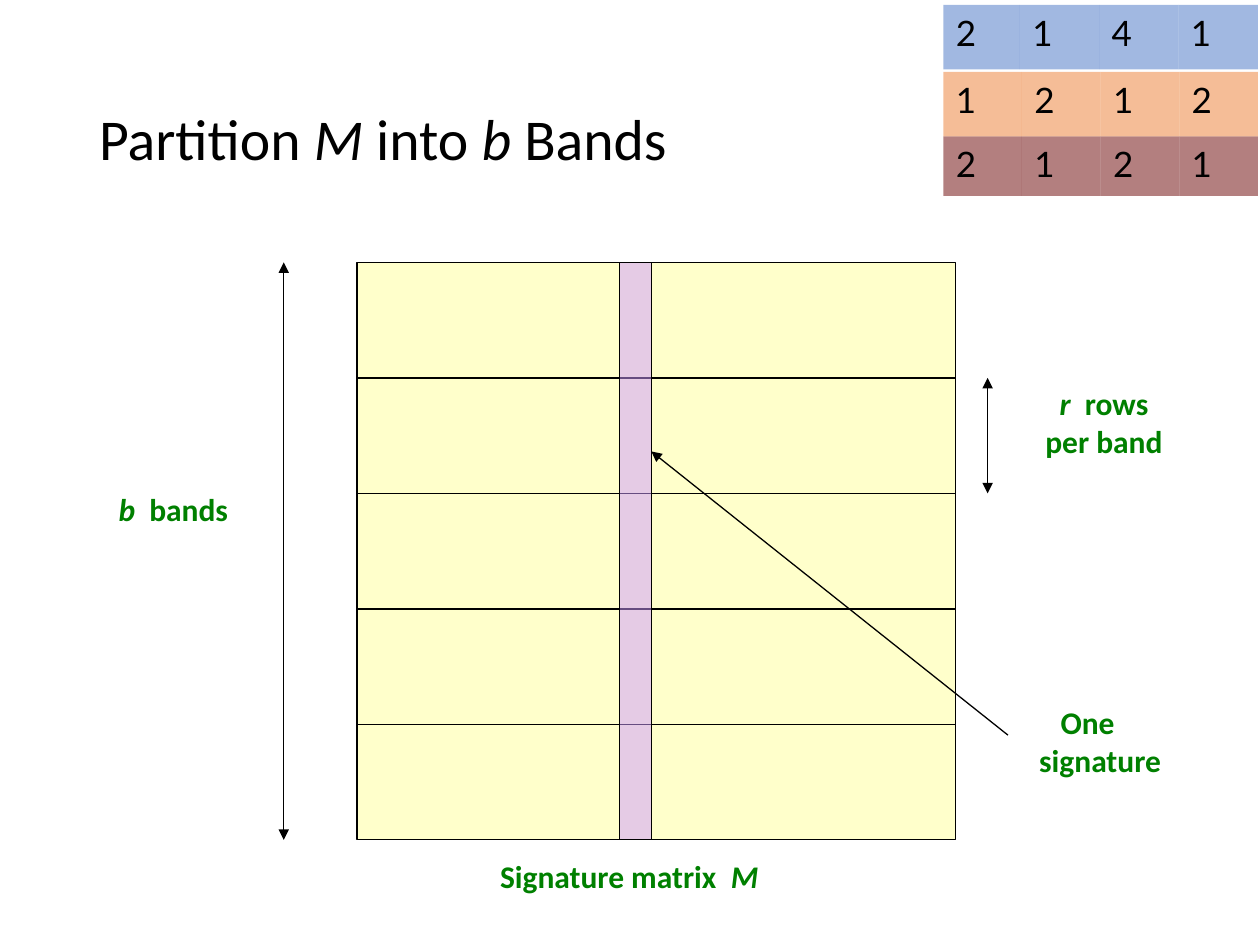
from pptx import Presentation
from pptx import util as u
from pptx.dml.color import RGBColor
from pptx.enum import shapes, text
from pptx.oxml.ns import qn
from lxml import etree

BLACK = RGBColor(0x00, 0x00, 0x00)
WHITE = RGBColor(0xFF, 0xFF, 0xFF)
GREEN = RGBColor(0x00, 0x80, 0x00)
YELLOW = RGBColor(0xFF, 0xFF, 0x99)
PURPLE = RGBColor(0xCC, 0x99, 0xFF)
BLUE = RGBColor(0x44, 0x72, 0xC4)
ORANGE = RGBColor(0xED, 0x7D, 0x31)
MAROON = RGBColor(0x68, 0x00, 0x00)

# Signature matrix, in centimetres
LEFT, TOP, WIDTH, HEIGHT = 7.2, 5.29, 12.06, 11.64
BANDS = 5
BAND_HEIGHT = HEIGHT / BANDS
COLUMN_LEFT, COLUMN_WIDTH = 12.49, 0.64

# Number grid: top, height, first column width, colour, values
GRID_LEFT, GRID_RIGHT = 19.02, 25.36
GRID_ROWS = [
    (2.75, 1.2, 1.58, MAROON, "2121"),
    (0.1, 1.3, 1.54, BLUE, "2141"),
    (1.45, 1.3, 1.58, ORANGE, "1212"),
]


def add_rectangle(slide, left, top, width, height, colour, half_clear=True, outlined=False):
    shape = slide.shapes.add_shape(
        shapes.MSO_SHAPE.RECTANGLE, u.Cm(left), u.Cm(top), u.Cm(width), u.Cm(height))
    shape.shadow.inherit = False
    shape.fill.solid()
    shape.fill.fore_color.rgb = colour
    if half_clear:
        colour_element = shape.fill._xPr.find(".//" + qn("a:srgbClr"))
        etree.SubElement(colour_element, qn("a:alpha"), val="50000")
    if outlined:
        shape.line.color.rgb = BLACK
        shape.line.width = u.Pt(0.75)
    else:
        shape.line.fill.background()
    return shape


def add_line(slide, start, end, head=False, tail=False):
    points = [u.Cm(value) for value in (*start, *end)]
    connector = slide.shapes.add_connector(shapes.MSO_CONNECTOR.STRAIGHT, *points)
    connector.line.color.rgb = BLACK
    connector.line.width = u.Pt(0.75)
    line = connector.line._get_or_add_ln()
    for name, wanted in (("a:headEnd", head), ("a:tailEnd", tail)):
        if wanted:
            etree.SubElement(line, qn(name), type="triangle")
    etree.SubElement(connector._element.spPr, qn("a:effectLst"))


def add_runs(paragraph, runs, size, colour, bold=False):
    """Each run is a pair of wording and italic flag."""
    for wording, italic in runs:
        run = paragraph.add_run()
        run.text = wording
        run.font.name = "Calibri"
        run.font.size = u.Pt(size)
        run.font.bold = bold
        run.font.italic = italic
        run.font.color.rgb = colour


def add_label(slide, left, top, width, height, lines, alignment=text.PP_ALIGN.CENTER):
    box = slide.shapes.add_textbox(u.Cm(left), u.Cm(top), u.Cm(width), u.Cm(height))
    frame = box.text_frame
    frame.word_wrap = False
    frame.auto_size = text.MSO_AUTO_SIZE.SHAPE_TO_FIT_TEXT
    for index, runs in enumerate(lines):
        paragraph = frame.add_paragraph() if index else frame.paragraphs[0]
        paragraph.alignment = alignment
        add_runs(paragraph, runs, 18, GREEN, bold=True)
    return frame


def add_title(slide):
    box = slide.shapes.add_textbox(u.Cm(1.75), u.Cm(1.02), u.Cm(21.9), u.Cm(3.68))
    frame = box.text_frame
    frame.word_wrap = True
    frame.vertical_anchor = text.MSO_ANCHOR.MIDDLE
    paragraph = frame.paragraphs[0]
    paragraph.line_spacing = 0.9
    add_runs(paragraph, [("Partition ", False), ("M", True), (" into ", False),
                         ("b", True), (" Bands", False)], 33, BLACK)


def add_matrix(slide):
    add_rectangle(slide, LEFT, TOP, WIDTH, HEIGHT, YELLOW, outlined=True)
    for band in range(1, BANDS):
        y = TOP + band * BAND_HEIGHT
        add_line(slide, (LEFT, y), (LEFT + WIDTH, y))
    add_rectangle(slide, COLUMN_LEFT, TOP, COLUMN_WIDTH, HEIGHT, PURPLE, outlined=True)


def add_annotations(slide):
    # Height of one band and of the whole matrix
    add_line(slide, (19.91, TOP + BAND_HEIGHT), (19.91, TOP + 2 * BAND_HEIGHT),
             head=True, tail=True)
    add_line(slide, (5.72, TOP), (5.72, TOP + HEIGHT), head=True, tail=True)
    # Pointer to the signature column
    add_line(slide, (20.32, 14.82), (COLUMN_LEFT + COLUMN_WIDTH, 9.1), tail=True)

    add_label(slide, 9.7, 17.15, 5.97, 1.02, [[("Signature matrix  ", False), ("M", True)]])
    add_label(slide, 20.78, 7.62, 2.95, 1.8,
              [[("r ", True), (" rows", False)], [("per band", False)]])
    add_label(slide, 2.11, 9.75, 2.77, 1.02, [[("b", True), ("  bands", False)]])
    frame = add_label(slide, 20.7, 14.05, 3.1, 1.78,
                      [[("One", False)], [("signature", False)]], text.PP_ALIGN.LEFT)
    properties = frame.paragraphs[0]._p.get_or_add_pPr()
    properties.set("marL", str(u.Cm(0.43)))
    properties.set("indent", "0")


def add_number_grid(slide):
    add_rectangle(slide, 18.85, 0, 6.55, 4.02, WHITE, half_clear=False)
    for top, height, first_width, colour, values in GRID_ROWS:
        other_width = (GRID_RIGHT - GRID_LEFT - first_width) / (len(values) - 1)
        left = GRID_LEFT
        for column, value in enumerate(values):
            width = other_width if column else first_width
            cell = add_rectangle(slide, left, top, width, height, colour)
            frame = cell.text_frame
            frame.text = value
            frame.vertical_anchor = text.MSO_ANCHOR.TOP
            paragraph = frame.paragraphs[0]
            paragraph.alignment = text.PP_ALIGN.LEFT
            font = paragraph.runs[0].font
            font.name = "Lato"
            font.size = u.Pt(20)
            font.color.rgb = BLACK
            left += width


def main():
    presentation = Presentation()
    presentation.slide_width = u.Cm(25.4)
    presentation.slide_height = u.Cm(19.05)
    slide = presentation.slides.add_slide(presentation.slide_layouts[6])
    add_title(slide)
    add_matrix(slide)
    add_annotations(slide)
    add_number_grid(slide)
    presentation.save("out.pptx")


if __name__ == "__main__":
    main()
